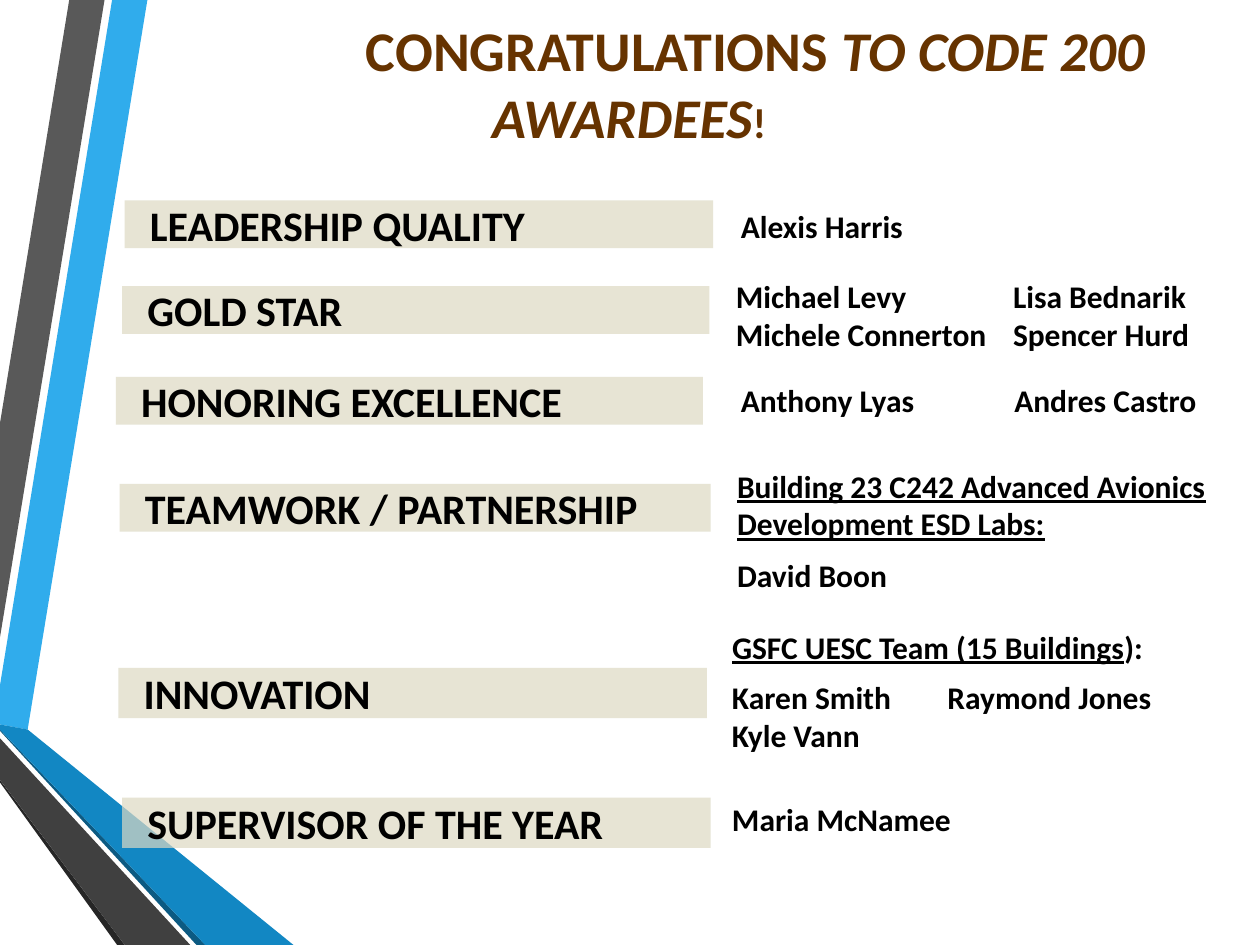
from lxml import etree
from pptx import Presentation
from pptx.dml.color import RGBColor
from pptx.enum import shapes, text
from pptx.oxml.ns import qn
from pptx.util import Inches, Pt

INK, TITLE, BAR = "000000", "663300", "DDD9C3"

RIBBONS = [
    ("30ACEC", [(0, 5.44), (0, 5.75), (0.22, 5.79), (1.17, 0), (0.89, 0)]),
    ("595959", [(0.83, 0), (0.55, 0), (0, 3.36), (0, 5.06)]),
    ("262626", [(0, 6.19), (0, 6.21), (0.93, 7.5), (0.99, 7.5)]),
    ("0C5A82", [(0, 5.79), (0, 5.8), (1.56, 7.5), (1.63, 7.5)]),
    ("1287C3", [(0, 5.79), (1.63, 7.5), (2.33, 7.5), (0.22, 5.79), (0, 5.75)]),
    ("404040", [(0, 6.19), (0.99, 7.5), (1.51, 7.5), (0, 5.86)]),
]

AWARDS = [
    ("LEADERSHIP QUALITY", 0.99, 1.59, 4.67, 0.38),
    ("GOLD STAR", 0.97, 2.27, 4.66, 0.38),
    ("HONORING EXCELLENCE", 0.92, 2.99, 4.66, 0.38),
    ("TEAMWORK / PARTNERSHIP", 0.95, 3.84, 4.69, 0.38),
    ("INNOVATION", 0.94, 5.3, 4.67, 0.4),
    ("SUPERVISOR OF THE YEAR", 0.97, 6.33, 4.67, 0.4),
]

UNDERLINED = {"underline": True}
WINNERS = [
    ([[("Alexis Harris", {})]], 5.88, 1.6, 4.07, 0.38),
    ([[("Michael Levy\vMichele Connerton", {})]], 5.84, 2.31, 2.15, 0.38),
    ([[("Lisa Bednarik\vSpencer Hurd", {})]], 8.04, 2.31, 1.87, 0.38),
    ([[("Anthony Lyas", {})]], 5.88, 2.98, 2.1, 0.38),
    ([[("Andres Castro", {})]], 8.05, 2.98, 1.87, 0.38),
    ([[("Building 23 C242 Advanced Avionics Development ESD Labs:", UNDERLINED)],
      [("David Boon", {})]], 5.85, 3.51, 4.06, 1.4),
    ([[("GSFC UESC Team (15 Buildings", UNDERLINED), ("):", {})]],
     5.81, 4.94, 4.05, 0.38),
    ([[("Karen Smith\vKyle Vann", {})]], 5.81, 5.31, 1.6, 0.74),
    ([[("Raymond Jones", {})]], 7.52, 5.34, 2.34, 0.38),
    ([[("Maria McNamee", {})]], 5.81, 6.31, 4.06, 0.38),
]


def paint(shape, color, opacity=100):
    """Give a shape a plain fill without outline or shadow."""
    shape.shadow.inherit = False
    shape.fill.solid()
    shape.fill.fore_color.rgb = RGBColor.from_string(color)
    if opacity < 100:
        tint = shape.fill._xPr.find(qn("a:solidFill"))[0]
        etree.SubElement(tint, qn("a:alpha"), val=str(opacity * 1000))
    shape.line.fill.background()


def add_run(paragraph, words, size, color, underline=False, italic=False):
    """Add a bold run to a paragraph, turning vertical tabs into line breaks."""
    for number, line in enumerate(words.split("\v")):
        if number:
            paragraph.add_line_break()
        run = paragraph.add_run()
        run.text = line
        font = run.font
        font.name, font.size, font.bold = "Calibri", Pt(size), True
        font.underline, font.italic = underline, italic
        font.color.rgb = RGBColor.from_string(color)


def write_text(shape, paragraphs, size, color=INK, align=text.PP_ALIGN.LEFT,
               inset=0, after=0, first_indent=0):
    """Fill a shape with paragraphs, each a list of (words, format) runs."""
    frame = shape.text_frame
    frame.word_wrap = True
    frame.vertical_anchor = text.MSO_ANCHOR.MIDDLE
    frame.margin_left = Inches(inset)
    frame.margin_top = frame.margin_right = frame.margin_bottom = 0
    for number, runs in enumerate(paragraphs):
        paragraph = frame.add_paragraph() if number else frame.paragraphs[0]
        paragraph.alignment = align
        paragraph.space_after = Pt(after)
        paragraph._p.get_or_add_pPr().set("indent", str(Inches(first_indent)))
        for words, style in runs:
            add_run(paragraph, words, **{"size": size, "color": color, **style})


def add_ribbon(slide, color, corners):
    """Draw one closed band of the side decoration."""
    start, *others = [(Inches(x), Inches(y)) for x, y in corners]
    builder = slide.shapes.build_freeform(*start)
    builder.add_line_segments(others, close=True)
    paint(builder.convert_to_shape(), color)


def add_award(slide, award, left, top, width, height):
    """Draw the translucent bar that names an award."""
    bar = slide.shapes.add_shape(
        shapes.MSO_SHAPE.RECTANGLE,
        Inches(left), Inches(top), Inches(width), Inches(height))
    paint(bar, BAR, opacity=70)
    write_text(bar, [[(award, {})]], size=24, inset=0.2, after=6)


def add_text_box(slide, paragraphs, left, top, width, height, **style):
    """Place a text box holding formatted paragraphs."""
    box = slide.shapes.add_textbox(
        Inches(left), Inches(top), Inches(width), Inches(height))
    write_text(box, paragraphs, **style)


def main():
    """Build the awards slide and save it."""
    deck = Presentation()
    deck.slide_width, deck.slide_height = Inches(10), Inches(7.5)
    slide = deck.slides.add_slide(deck.slide_layouts[6])
    for color, corners in RIBBONS:
        add_ribbon(slide, color, corners)
    for award in AWARDS:
        add_award(slide, *award)
    for winners in WINNERS:
        add_text_box(slide, *winners, size=18, after=8)
    headline = [("CONGRATULATIONS ", {}),
                ("TO CODE 200 AWARDEES", {"italic": True}),
                ("!", {"size": 24})]
    add_text_box(slide, [headline], 0.08, 0.08, 9.83, 1.15, size=32, color=TITLE,
                 align=text.PP_ALIGN.CENTER, after=18, first_indent=2)
    deck.save("out.pptx")


if __name__ == "__main__":
    main()
